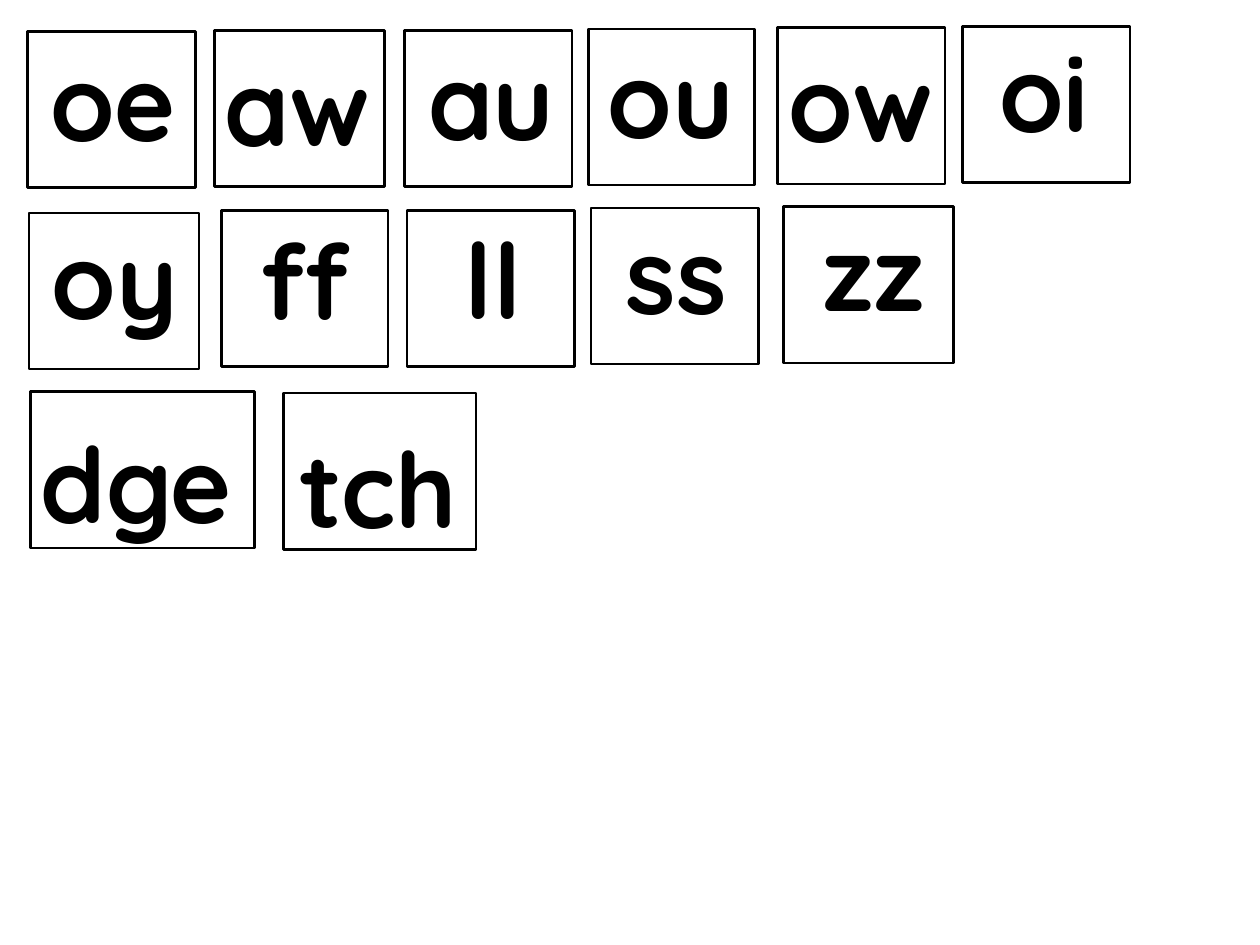
from pptx import Presentation
from pptx.dml.color import RGBColor
from pptx.enum.shapes import MSO_SHAPE as SHAPE
from pptx.enum.text import MSO_ANCHOR, MSO_AUTO_SIZE, PP_ALIGN
from pptx.util import Inches, Pt

BLACK = RGBColor(0, 0, 0)
WHITE = RGBColor(255, 255, 255)
CARD_H = 1.24
TALL = 2.36
LETTERS = {"name": "Quicksand", "size": Pt(60), "bold": True}

# letters, (card left, top, width), (text left, top, width, height)
CARDS = [
    ("oe", (0.22, 0.25, 1.33), (0.12, 0.24, 1.55, TALL)),
    ("aw", (1.7, 0.24, 1.35), (1.5, 0.28, 1.72, TALL)),
    ("au", (3.21, 0.24, 1.33), (3.1, 0.23, 1.6, TALL)),
    ("ou", (4.67, 0.23, 1.32), (4.55, 0.22, 1.55, TALL)),
    ("ow", (6.17, 0.22, 1.33), (5.97, 0.25, 1.72, TALL)),
    ("oi", (7.64, 0.21, 1.33), (7.51, 0.17, 1.55, CARD_H)),
    ("oy", (0.23, 1.69, 1.35), (0.02, 1.65, 1.78, CARD_H)),
    ("dge", (0.24, 3.11, 1.78), (0.07, 3.27, 2.02, TALL)),
    ("tch", (2.25, 3.12, 1.53), (1.99, 3.31, 2.02, TALL)),
    ("ff", (1.76, 1.67, 1.32), (1.64, 1.66, 1.55, CARD_H)),
    ("ll", (3.23, 1.67, 1.33), (3.14, 1.65, 1.55, CARD_H)),
    ("ss", (4.69, 1.65, 1.33), (4.59, 1.61, 1.55, CARD_H)),
    ("zz", (6.22, 1.64, 1.35), (6.16, 1.59, 1.55, CARD_H)),
]


def add_card(s, letters, card_at, text_at):
    group = s.shapes.add_group_shape()
    card = group.shapes.add_shape(SHAPE.RECTANGLE, *map(Inches, (*card_at, CARD_H)))
    card.shadow.inherit = False
    card.fill.solid()
    card.fill.fore_color.rgb = WHITE
    card.line.color.rgb = BLACK
    card.line.width = Pt(1.5)

    tf = group.shapes.add_textbox(*map(Inches, text_at)).text_frame
    tf.word_wrap = True
    tf.auto_size = MSO_AUTO_SIZE.SHAPE_TO_FIT_TEXT
    tf.vertical_anchor = MSO_ANCHOR.TOP
    p = tf.paragraphs[0]
    p.alignment = PP_ALIGN.CENTER
    r = p.add_run()
    r.text = letters
    for key, value in LETTERS.items():
        setattr(r.font, key, value)
    r.font.color.rgb = BLACK


prs = Presentation()
prs.slide_width, prs.slide_height = Inches(10), Inches(7.5)
s = prs.slides.add_slide(prs.slide_layouts[6])
for card in CARDS:
    add_card(s, *card)
prs.save("out.pptx")
